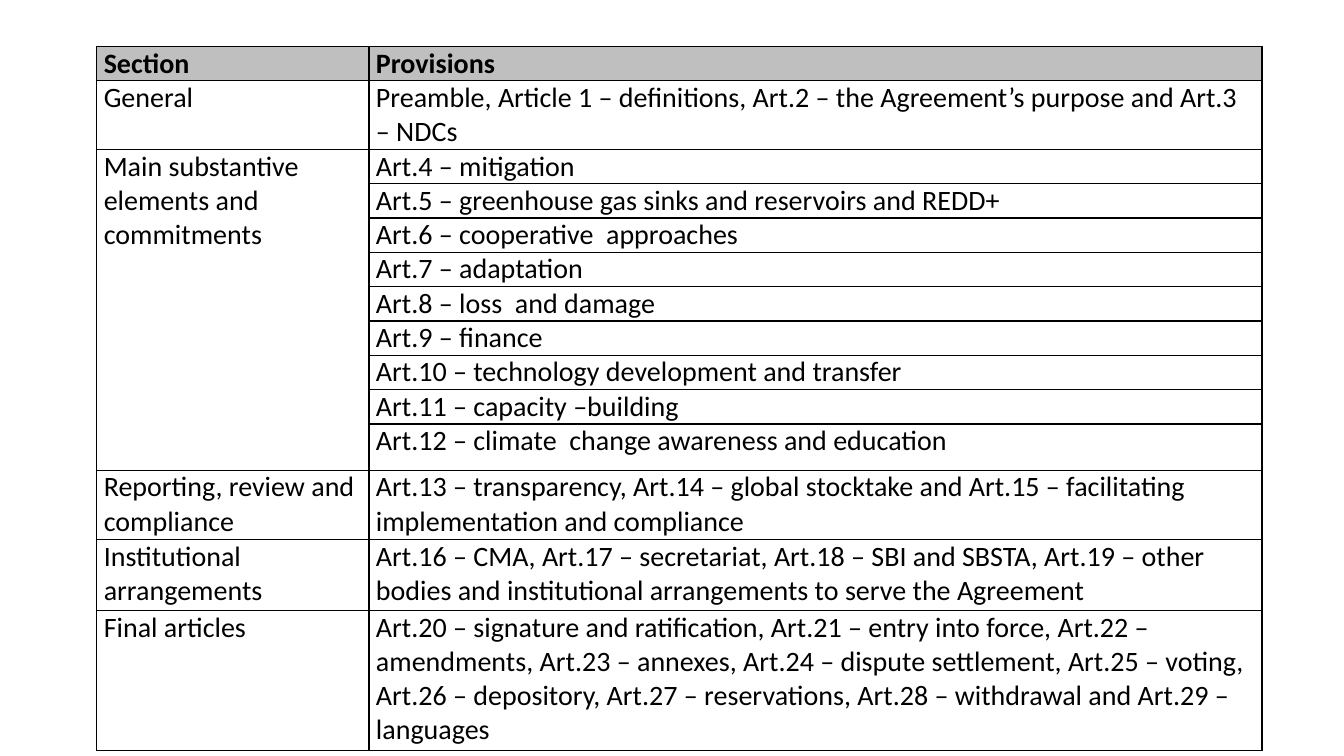
"""Build a slide with a table of the Paris Agreement's sections and provisions."""
import lxml.etree
import pptx
import pptx.dml.color
import pptx.oxml.ns
import pptx.util

HEADINGS = ("Section", "Provisions")
SECTIONS = [
    ("General", [
        ("Preamble, Article 1 – definitions, Art.2 – the Agreement’s purpose and Art.3 – NDCs", 46.8),
    ]),
    ("Main substantive elements and commitments", [
        ("Art.4 – mitigation", 23.76),
        ("Art.5 – greenhouse gas sinks and reservoirs and REDD+", 23.76),
        ("Art.6 – cooperative  approaches", 23.76),
        ("Art.7 – adaptation", 23.76),
        ("Art.8 – loss  and damage", 23.76),
        ("Art.9 – finance", 23.76),
        ("Art.10 – technology development and transfer", 23.76),
        ("Art.11 – capacity –building", 23.76),
        ("Art.12 – climate  change awareness and education", 33.12),
    ]),
    ("Reporting, review and compliance", [
        ("Art.13 – transparency, Art.14 – global stocktake and Art.15 – facilitating "
         "implementation and compliance", 49.68),
    ]),
    ("Institutional arrangements", [
        ("Art.16 – CMA, Art.17 – secretariat, Art.18 – SBI and SBSTA, Art.19 – other bodies "
         "and institutional arrangements to serve the Agreement", 50.4),
    ]),
    ("Final articles", [
        ("Art.20 – signature and ratification, Art.21 – entry into force, Art.22 – amendments, "
         "Art.23 – annexes, Art.24 – dispute settlement, Art.25 – voting, Art.26 – depository, "
         "Art.27 – reservations, Art.28 – withdrawal and Art.29 – languages", 100.08),
    ]),
]
THEME = {"font": "Calibri", "size": 20, "text": "000000", "header": "BFBFBF",
         "border": "000000", "border_width": 1}
LEFT, TOP = 69.12, 33.12
COLUMN_WIDTHS = (194.4, 637.92)
HEADER_HEIGHT = 23.76
SIDE_MARGIN = 5.04


def add_borders(cell):
    """Draw a solid line on each side of a cell."""
    properties = cell._tc.get_or_add_tcPr()
    for position, side in enumerate(("lnL", "lnR", "lnT", "lnB")):
        line = lxml.etree.Element(pptx.oxml.ns.qn(f"a:{side}"),
                                  w=str(pptx.util.Pt(THEME["border_width"])))
        fill = lxml.etree.SubElement(line, pptx.oxml.ns.qn("a:solidFill"))
        lxml.etree.SubElement(fill, pptx.oxml.ns.qn("a:srgbClr"), val=THEME["border"])
        properties.insert(position, line)


def format_cell(cell, text, header):
    """Write a cell's text and apply the table style."""
    cell.margin_left = cell.margin_right = pptx.util.Pt(SIDE_MARGIN)
    cell.margin_top = cell.margin_bottom = pptx.util.Pt(0)
    if header:
        cell.fill.solid()
        cell.fill.fore_color.rgb = pptx.dml.color.RGBColor.from_string(THEME["header"])
    else:
        cell.fill.background()
    paragraph = cell.text_frame.paragraphs[0]
    paragraph.text = text
    paragraph.font.size = pptx.util.Pt(THEME["size"])
    for run in paragraph.runs:
        run.font.name = THEME["font"]
        run.font.size = pptx.util.Pt(THEME["size"])
        run.font.bold = header
        run.font.color.rgb = pptx.dml.color.RGBColor.from_string(THEME["text"])
    add_borders(cell)


def main():
    """Create the presentation and save it."""
    presentation = pptx.Presentation()
    presentation.slide_width = pptx.util.Pt(960)
    presentation.slide_height = pptx.util.Pt(540)
    slide = presentation.slides.add_slide(presentation.slide_layouts[6])

    rows = [(*HEADINGS, HEADER_HEIGHT)]
    merges = []
    for section, provisions in SECTIONS:
        first = len(rows)
        for index, (provision, height) in enumerate(provisions):
            rows.append((section if index == 0 else "", provision, height))
        if len(provisions) > 1:
            merges.append((first, len(rows) - 1))

    total_height = sum(height for _, _, height in rows)
    table = slide.shapes.add_table(
        len(rows), len(COLUMN_WIDTHS), pptx.util.Pt(LEFT), pptx.util.Pt(TOP),
        pptx.util.Pt(sum(COLUMN_WIDTHS)), pptx.util.Pt(total_height)).table
    table.horz_banding = False
    table.first_row = False
    for column, width in zip(table.columns, COLUMN_WIDTHS):
        column.width = pptx.util.Pt(width)
    for row_index, (section, provision, height) in enumerate(rows):
        table.rows[row_index].height = pptx.util.Pt(height)
        for column_index, text in enumerate((section, provision)):
            format_cell(table.cell(row_index, column_index), text, row_index == 0)
    for first, last in merges:
        table.cell(first, 0).merge(table.cell(last, 0))
    presentation.save("out.pptx")


if __name__ == "__main__":
    main()
